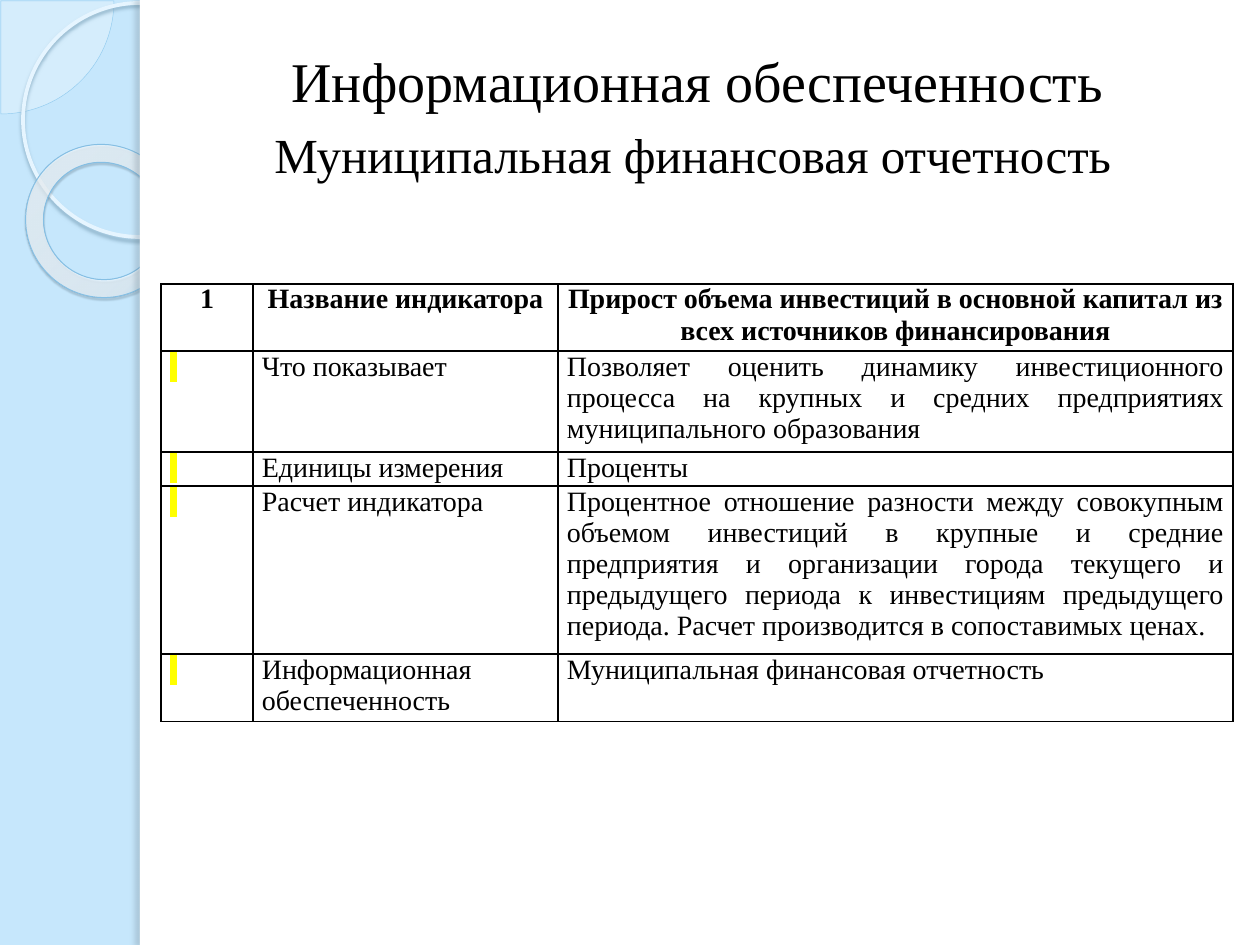
from dataclasses import dataclass
from typing import Optional

from lxml.etree import SubElement
from pptx import Presentation
from pptx.dml.color import RGBColor
from pptx.enum.shapes import MSO_SHAPE as Preset
from pptx.enum.text import MSO_ANCHOR as Anchor, MSO_AUTO_SIZE as AutoSize, PP_ALIGN as Align
from pptx.oxml.ns import qn
from pptx.util import Emu, Pt

PX_PER_INCH = 126
FONT = "Times New Roman"
BLACK = "000000"
WHITE = "FFFFFF"


@dataclass(frozen=True)
class Shadow:
    color: str
    alpha: int
    blur: float
    distance: float
    angle: int


@dataclass(frozen=True)
class Decoration:
    preset: Preset
    box: tuple[int, int, int, int]
    fill: Optional[str] = None
    alpha: int = 100
    line: Optional[str] = None
    line_width: float = 0
    shadow: Optional[Shadow] = None
    rotation: float = 0
    adjustments: tuple[float, ...] = ()
    glow_stops: tuple[tuple[int, str, int], ...] = ()


PANEL_LEFT = 140
DECORATIONS = (
    Decoration(Preset.PIE, (-112, -112, 226, 226), "F5FBFF", 33, "92CBEF", 0.25,
               adjustments=(0, 54)),
    Decoration(Preset.OVAL, (23, 3, 234, 234), line="E6F5FF", line_width=2.15,
               shadow=Shadow("88ADC4", 85, 2, 2, 90)),
    Decoration(Preset.DONUT, (25, 145, 155, 152), line="85BFE4", line_width=0.58,
               shadow=Shadow("3F5767", 35, 1, 1.2, 75), rotation=38.6, adjustments=(0.118,),
               glow_stops=((0, "F8FCFF", 70), (70, "FCFEFF", 55), (100, "8ED3FF", 60))),
    Decoration(Preset.RECTANGLE, (PANEL_LEFT, 0, 1260 - PANEL_LEFT, 945), WHITE),
    Decoration(Preset.RECTANGLE, (PANEL_LEFT, 0, 10, 945), WHITE,
               shadow=Shadow("61737F", 25, 3, 3, 180)),
)

COLUMN_WIDTHS = (92, 305, 675)
ROW_HEIGHTS = (67, 101, 34, 168, 67)
HEADER = ("1", "Название индикатора",
          "Прирост объема инвестиций в основной капитал из всех источников финансирования")
INDICATOR = (
    ("Что показывает",
     "Позволяет оценить динамику инвестиционного процесса на крупных и средних "
     "предприятиях муниципального образования"),
    ("Единицы измерения", "Проценты"),
    ("Расчет индикатора",
     "Процентное отношение разности между совокупным объемом инвестиций в крупные и средние "
     "предприятия и организации города текущего и предыдущего периода к инвестициям "
     "предыдущего периода. Расчет производится в сопоставимых ценах."),
    ("Информационная обеспеченность", "Муниципальная финансовая отчетность"),
)


def px(length: int) -> Emu:
    return Emu(round(length * 914400 / PX_PER_INCH))


def rgb(color: str) -> RGBColor:
    return RGBColor.from_string(color)


def add_color(parent, color: str, alpha: int = 100) -> None:
    """Append an srgbClr element, with transparency where alpha is below 100."""
    node = SubElement(parent, qn("a:srgbClr"), val=color)
    if alpha < 100:
        SubElement(node, qn("a:alpha"), val=str(alpha * 1000))


def add_shadow(shape, shadow: Shadow) -> None:
    effects = shape._element.spPr.find(qn("a:effectLst"))
    outer = SubElement(effects, qn("a:outerShdw"), blurRad=str(Pt(shadow.blur)),
                       dist=str(Pt(shadow.distance)), dir=str(shadow.angle * 60000),
                       algn="tl", rotWithShape="0")
    add_color(outer, shadow.color, shadow.alpha)


def fill_with_glow(shape, stops) -> None:
    """Give the shape a circular gradient of translucent stops."""
    shape.fill.gradient()
    gradient = shape._element.spPr.find(qn("a:gradFill"))
    for child in list(gradient):
        gradient.remove(child)
    stop_list = SubElement(gradient, qn("a:gsLst"))
    for position, color, alpha in stops:
        add_color(SubElement(stop_list, qn("a:gs"), pos=str(position * 1000)), color, alpha)
    circle = SubElement(gradient, qn("a:path"), path="circle")
    SubElement(circle, qn("a:fillToRect"), l="-408000", t="-50000", r="508000", b="150000")


def add_decoration(slide, item: Decoration) -> None:
    shape = slide.shapes.add_shape(item.preset, *map(px, item.box))
    shape.rotation = item.rotation
    for index, value in enumerate(item.adjustments):
        shape.adjustments[index] = value
    if item.glow_stops:
        fill_with_glow(shape, item.glow_stops)
    elif item.fill:
        shape.fill.solid()
        shape.fill.fore_color.rgb = rgb(item.fill)
        if item.alpha < 100:
            solid = shape._element.spPr.find(qn("a:solidFill"))
            solid.clear()
            add_color(solid, item.fill, item.alpha)
    else:
        shape.fill.background()
    if item.line:
        shape.line.color.rgb = rgb(item.line)
        shape.line.width = Pt(item.line_width)
    else:
        shape.line.fill.background()
    shape.shadow.inherit = False
    if item.shadow:
        add_shadow(shape, item.shadow)


def style_font(font, size: int, bold: bool = False) -> None:
    font.name = FONT
    font.size = Pt(size)
    font.bold = bold
    font.color.rgb = rgb(BLACK)


def add_title(slide, text: str) -> None:
    title = slide.shapes.title
    title.left, title.top, title.width, title.height = map(px, (212, 35, 971, 118))
    frame = title.text_frame
    frame.text = text
    frame.auto_size = AutoSize.NONE
    frame.vertical_anchor = Anchor.TOP
    frame.margin_top = px(11)
    frame.paragraphs[0].alignment = Align.CENTER
    style_font(frame.paragraphs[0].font, 32)
    slide.shapes._spTree.append(title._element)  # bring in front of the white panel


def add_subtitle(slide, text: str) -> None:
    frame = slide.shapes.add_textbox(*map(px, (262, 118, 871, 72))).text_frame
    frame.text = text
    frame.word_wrap = False
    frame.auto_size = AutoSize.SHAPE_TO_FIT_TEXT
    style_font(frame.paragraphs[0].font, 28)


def frame_cell(cell) -> None:
    """Draw a thin black border round an unfilled cell."""
    properties = cell._tc.get_or_add_tcPr()
    for side in ("a:lnL", "a:lnR", "a:lnT", "a:lnB"):
        border = SubElement(properties, qn(side), w=str(Pt(1)))
        add_color(SubElement(border, qn("a:solidFill")), BLACK)
    cell.fill.background()
    cell.margin_left = cell.margin_right = px(9)
    cell.margin_top = cell.margin_bottom = 0


def add_highlighted_space(paragraph) -> None:
    run = paragraph.add_run()
    run.text = " "
    style_font(run.font, 16)
    highlight = SubElement(run._r.rPr, qn("a:highlight"))
    add_color(highlight, "FFFF00")
    run._r.rPr.find(qn("a:solidFill")).addnext(highlight)


def add_indicator_table(slide) -> None:
    box = (161, 284, sum(COLUMN_WIDTHS), sum(ROW_HEIGHTS))
    rows = (HEADER, *(("", *row) for row in INDICATOR))
    table = slide.shapes.add_table(len(rows), len(HEADER), *map(px, box)).table
    table.first_row = table.horz_banding = False
    for column, width in zip(table.columns, COLUMN_WIDTHS):
        column.width = px(width)
    for row, height in zip(table.rows, ROW_HEIGHTS):
        row.height = px(height)
    for r, texts in enumerate(rows):
        for c, text in enumerate(texts):
            cell = table.cell(r, c)
            frame_cell(cell)
            paragraph = cell.text_frame.paragraphs[0]
            if not text:
                add_highlighted_space(paragraph)
                continue
            paragraph.text = text
            style_font(paragraph.font, 16, bold=r == 0)
            if r == 0:
                paragraph.alignment = Align.CENTER
                paragraph.space_before = paragraph.space_after = Pt(6)
            elif c == 2:
                paragraph.alignment = Align.JUSTIFY


def main() -> None:
    deck = Presentation()
    deck.slide_width, deck.slide_height = px(1260), px(945)
    slide = deck.slides.add_slide(deck.slide_layouts[5])
    slide.background.fill.solid()
    slide.background.fill.fore_color.rgb = rgb("C6E7FC")
    for item in DECORATIONS:
        add_decoration(slide, item)
    add_title(slide, "Информационная обеспеченность")
    add_subtitle(slide, "Муниципальная финансовая отчетность")
    add_indicator_table(slide)
    deck.save("out.pptx")


if __name__ == "__main__":
    main()
